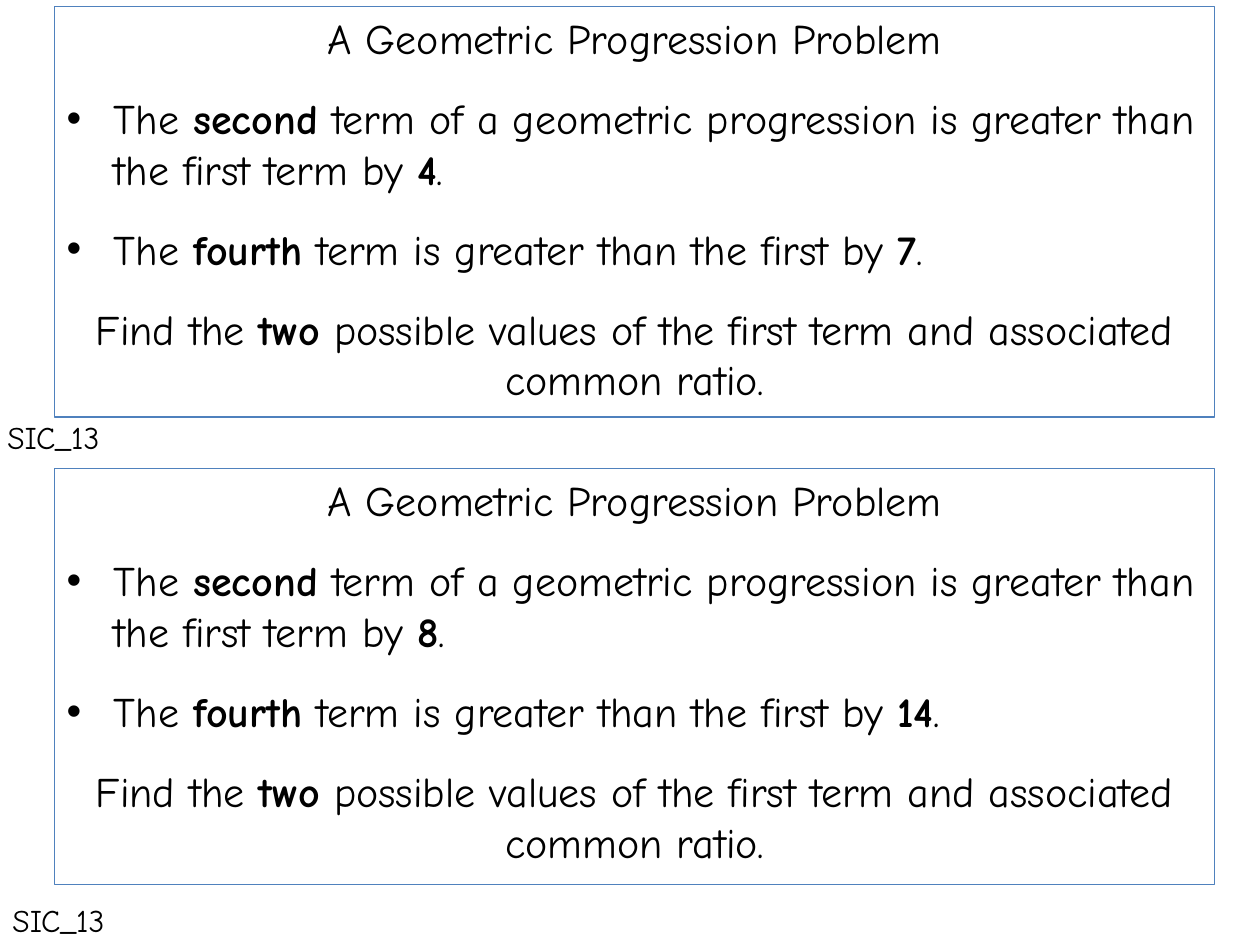
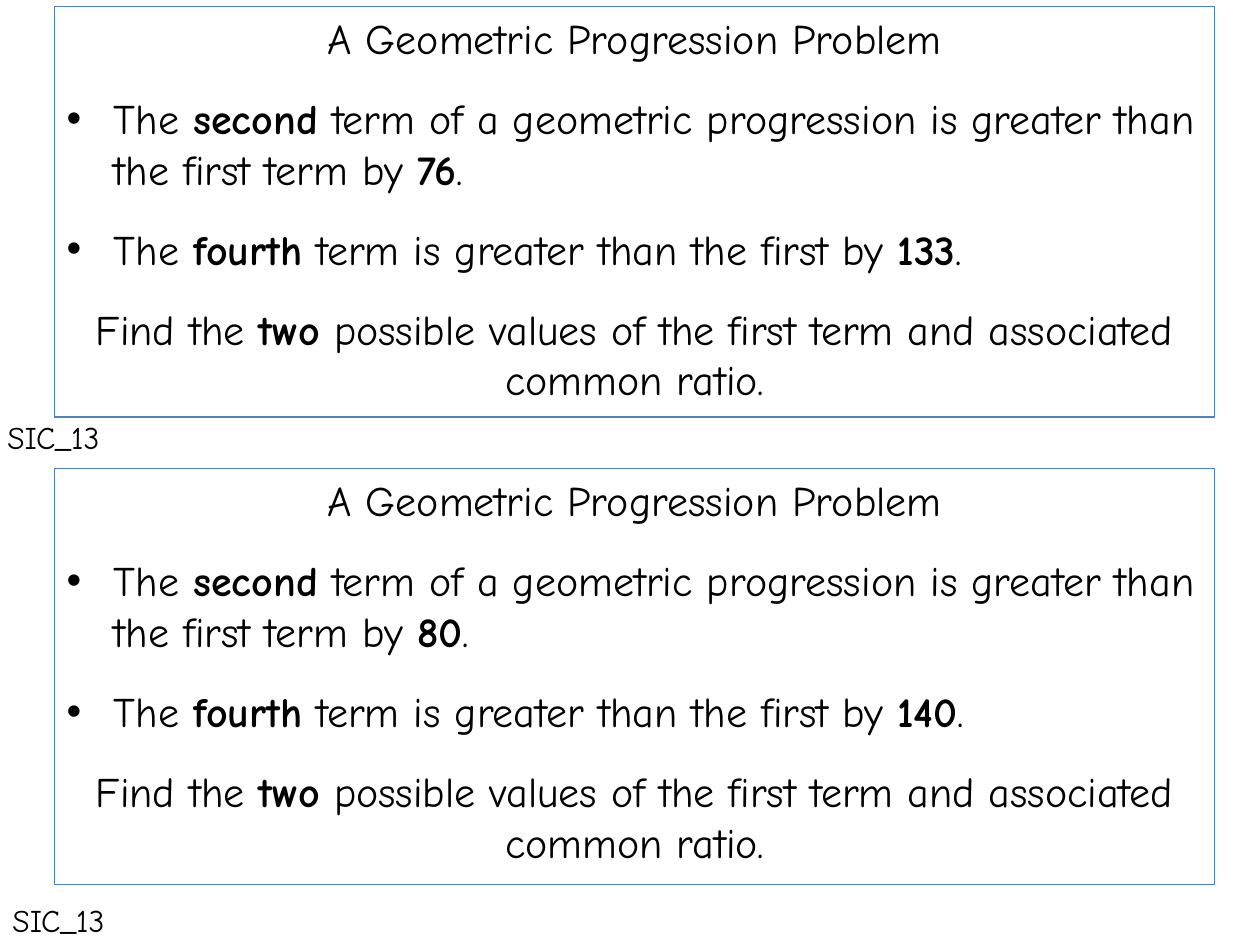
from dataclasses import dataclass

from lxml import etree
from pptx import Presentation
from pptx.dml.color import RGBColor
from pptx.enum.shapes import MSO_SHAPE
from pptx.enum.text import MSO_ANCHOR, PP_ALIGN
from pptx.oxml.ns import qn
from pptx.util import Pt

RECTANGLE = MSO_SHAPE.RECTANGLE
TOP = MSO_ANCHOR.TOP
LEFT, CENTER = PP_ALIGN.LEFT, PP_ALIGN.CENTER


@dataclass(frozen=True)
class Theme:
    """Colours, font and type sizes shared by all slides."""
    font: str = "Comic Neue"
    bullet_font: str = "Arial"
    ink: RGBColor = RGBColor(0, 0, 0)
    border: RGBColor = RGBColor(0x4F, 0x81, 0xBD)
    body_size: int = 24
    code_size: int = 18
    paragraph_gap: int = 17
    bullet_indent: int = 27


THEME = Theme()
CODE = "SIC_13"
CARD_LEFT, CARD_WIDTH = 31, 663
CARD_ROWS = [(3.6, 234.7), (267.8, 237.6)]
CODE_PLACES = [(-2.9, 235.4), (0, 511.2)]
PROBLEMS = [[(4, 7), (8, 14)], [(76, 133), (80, 140)]]


def add_run(p, text, size, bold=False):
    """Append one styled run to a paragraph."""
    r = p.add_run()
    r.text = text
    r.font.name = THEME.font
    r.font.size = Pt(size)
    r.font.bold = bold
    r.font.color.rgb = THEME.ink


def add_bullet(p):
    """Give a paragraph a hanging bullet."""
    properties = p._p.get_or_add_pPr()
    indent = Pt(THEME.bullet_indent)
    properties.set("marL", str(indent))
    properties.set("indent", str(-indent))
    etree.SubElement(properties, qn("a:buFont"), typeface=THEME.bullet_font)
    etree.SubElement(properties, qn("a:buChar"), char="•")


def fill_paragraph(p, pieces, align, bulleted=False):
    """Write pieces into a paragraph, with every second piece in bold."""
    p.alignment = align
    for i, text in enumerate(pieces):
        add_run(p, text, THEME.body_size, bold=i % 2 == 1)
    if bulleted:
        add_bullet(p)


def add_problem_card(s, top, height, second_gain, fourth_gain):
    """Draw a bordered card that states one progression problem."""
    card = s.shapes.add_shape(RECTANGLE, Pt(CARD_LEFT), Pt(top), Pt(CARD_WIDTH), Pt(height))
    card.shadow.inherit = False
    card.fill.background()
    card.line.color.rgb = THEME.border
    card.line.width = Pt(0.75)
    tf = card.text_frame
    tf.word_wrap = True
    tf.vertical_anchor = TOP
    fill_paragraph(tf.paragraphs[0], ["A Geometric Progression Problem"], CENTER)
    statements = [
        (["The ", "second", " term of a geometric progression is greater than the first term by ",
          str(second_gain), "."], LEFT, True),
        (["The ", "fourth", " term is greater than the first by ", str(fourth_gain), "."],
         LEFT, True),
        (["Find the ", "two", " possible values of the first term and associated common ratio."],
         CENTER, False),
    ]
    for pieces, align, bulleted in statements:
        p = tf.add_paragraph()
        p.space_before = Pt(THEME.paragraph_gap)
        fill_paragraph(p, pieces, align, bulleted)


def add_code(s, left, top):
    """Place the problem code below a card."""
    box = s.shapes.add_textbox(Pt(left), Pt(top), Pt(70), Pt(29))
    tf = box.text_frame
    tf.word_wrap = True
    add_run(tf.paragraphs[0], CODE, THEME.code_size)


def main():
    """Build the problem slides and save them."""
    prs = Presentation()
    prs.slide_width, prs.slide_height = Pt(720), Pt(540)
    for pair in PROBLEMS:
        s = prs.slides.add_slide(prs.slide_layouts[6])
        for (top, height), gains in zip(CARD_ROWS, pair):
            add_problem_card(s, top, height, *gains)
        for left, top in CODE_PLACES:
            add_code(s, left, top)
    prs.save("out.pptx")


if __name__ == "__main__":
    main()
